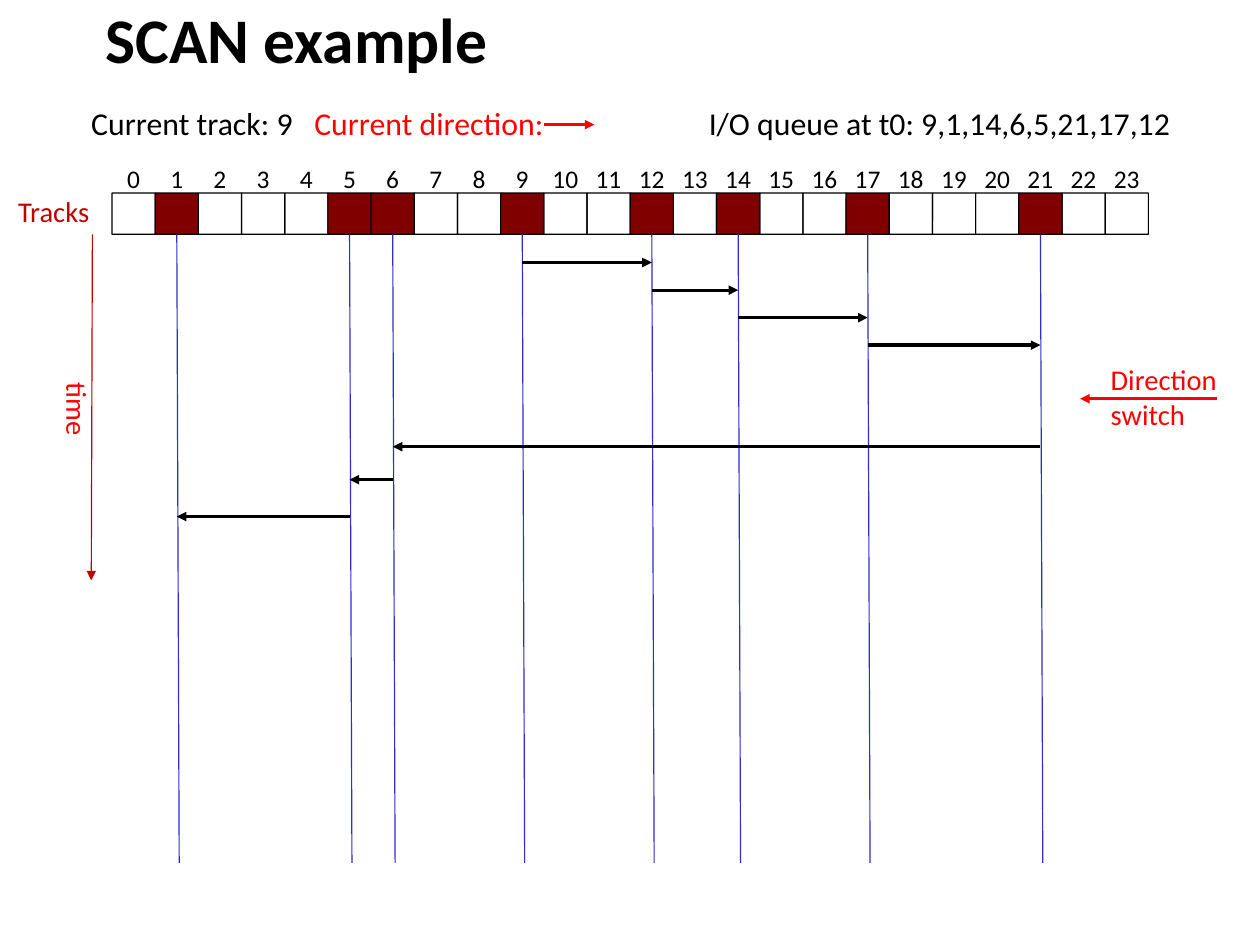
from collections import namedtuple

from lxml.etree import SubElement as add_node
from pptx import Presentation
from pptx.dml.color import RGBColor
from pptx.enum.shapes import MSO_CONNECTOR as Connector, MSO_SHAPE as Preset
from pptx.enum.text import MSO_ANCHOR as Anchor
from pptx.oxml.ns import qn
from pptx.util import Pt

BLACK = RGBColor(0x00, 0x00, 0x00)
RED = RGBColor(0xFF, 0x00, 0x00)
DARK_RED = RGBColor(0xC0, 0x00, 0x00)
MAROON = RGBColor(0x80, 0x00, 0x00)
BLUE = RGBColor(0x2E, 0x2E, 0xCB)

FONT = "Calibri"
TRACK_COUNT = 24
REQUESTS = (1, 5, 6, 9, 12, 14, 17, 21)
HEAD_MOVES = (
    (9, 12, 17.8), (12, 14, 35.2), (14, 17, 52.5), (17, 21, 69.8),
    (21, 6, 133.8), (6, 5, 154.6), (5, 1, 177.8),
)

Box = namedtuple("Box", "left top width height")


def write_text(slide, box, paragraphs, size=18, color=BLACK, bold=False,
               anchor=Anchor.TOP, tabs=(), vertical=False, spacing=None):
    shape = slide.shapes.add_textbox(*map(Pt, box))
    frame = shape.text_frame
    frame.word_wrap = True
    frame.vertical_anchor = anchor
    if vertical:
        shape.element.find(".//" + qn("a:bodyPr")).set("vert", "vert")
    for index, spans in enumerate(paragraphs):
        para = frame.add_paragraph() if index else frame.paragraphs[0]
        para.line_spacing = spacing
        if tabs:
            tab_list = add_node(para._p.get_or_add_pPr(), qn("a:tabLst"))
            for position, align in tabs:
                add_node(tab_list, qn("a:tab"), pos=str(Pt(position)), algn=align)
        for text, span_color in spans:
            span = para.add_run()
            span.text = text
            span.font.name = FONT
            span.font.size = Pt(size)
            span.font.bold = bold
            span.font.color.rgb = span_color or color


def draw_line(slide, start, end, color, width=0.75, arrow=False):
    line = slide.shapes.add_connector(Connector.STRAIGHT, *map(Pt, start + end))
    line.line.color.rgb = color
    line.line.width = Pt(width)
    if arrow:
        add_node(line.line._get_or_add_ln(), qn("a:tailEnd"), type="triangle")
    add_node(line.element.spPr, qn("a:effectLst"))


def add_header(slide, box):
    left, top, width, height = box
    write_text(slide, Box(left + 9, top - 0.6, width - 9, 41), [[("SCAN example", None)]],
               size=40, bold=True, anchor=Anchor.MIDDLE, spacing=0.94)
    summary = [
        ("Current track: 9", None),
        ("\tCurrent direction:", RED),
        ("\tI/O queue at t0: 9,1,14,6,5,21,17,12", None),
    ]
    write_text(slide, Box(left, top + 55.2, width, 32), [summary],
               size=20, tabs=((140.5, "l"), (389, "l")))
    arrow_y = top + 72
    draw_line(slide, (left + 292.3, arrow_y), (left + 324, arrow_y), RED, 2, True)


def add_track_row(slide, box):
    cell_width = box.width / TRACK_COUNT
    for track in range(TRACK_COUNT):
        left = box.left + track * cell_width
        cell = slide.shapes.add_shape(Preset.ROUNDED_RECTANGLE, Pt(left), Pt(box.top),
                                      Pt(cell_width), Pt(box.height))
        cell.adjustments[0] = 0.005
        cell.shadow.inherit = False
        cell.line.color.rgb = BLACK
        cell.line.width = Pt(0.75)
        if track in REQUESTS:
            cell.fill.solid()
            cell.fill.fore_color.rgb = MAROON
        else:
            cell.fill.background()
    inset = 7.2
    numbers = "".join(f"\t{track}" for track in range(TRACK_COUNT))
    stops = [((track + 0.5) * cell_width, "ctr") for track in range(TRACK_COUNT)]
    write_text(slide, Box(box.left - inset, box.top - 22.3, box.width + 2 * inset, 26.6),
               [[(numbers, None)]], size=16, tabs=stops)
    write_text(slide, Box(4.3, box.top - 2.9, 64, 28.8), [[("Tracks", DARK_RED)]])


def add_head_moves(slide, box):
    cell_width = box.width / TRACK_COUNT

    def track_x(track):
        return box.left + (track + 0.5) * cell_width

    for track in REQUESTS:
        draw_line(slide, (track_x(track), box.top),
                  (track_x(track) + 1.5, box.top + box.height), BLUE)
    for origin, target, offset in HEAD_MOVES:
        y = box.top + offset
        draw_line(slide, (track_x(origin), y), (track_x(target), y), BLACK, 2, True)


def add_time_axis(slide, box):
    right = box.left + box.width
    draw_line(slide, (right, box.top), (right - 0.7, box.top + box.height),
              DARK_RED, arrow=True)
    write_text(slide, Box(box.left, box.top + 86.4, 36, 60), [[("time", RED)]],
               vertical=True)


def add_direction_switch(slide, box):
    write_text(slide, Box(box.left + 12.2, box.top, box.width - 12.2, box.height),
               [[("Direction", RED)], [("switch", RED)]])
    y = box.top + 26.6
    draw_line(slide, (box.left + 86.4, y), (box.left, y), RED, 2, True)


def main():
    deck = Presentation()
    deck.slide_width, deck.slide_height = Pt(793.7), Pt(595.3)
    slide = deck.slides.add_slide(deck.slide_layouts[6])
    add_header(slide, Box(50.4, 6.5, 704, 88))
    add_track_row(slide, Box(70.6, 121.6, 652.8, 26))
    add_head_moves(slide, Box(70.6, 147.6, 652.8, 396))
    add_time_axis(slide, Box(27.4, 147.6, 30.8, 218))
    add_direction_switch(slide, Box(680.4, 224.6, 98.6, 51))
    deck.save("out.pptx")


if __name__ == "__main__":
    main()
